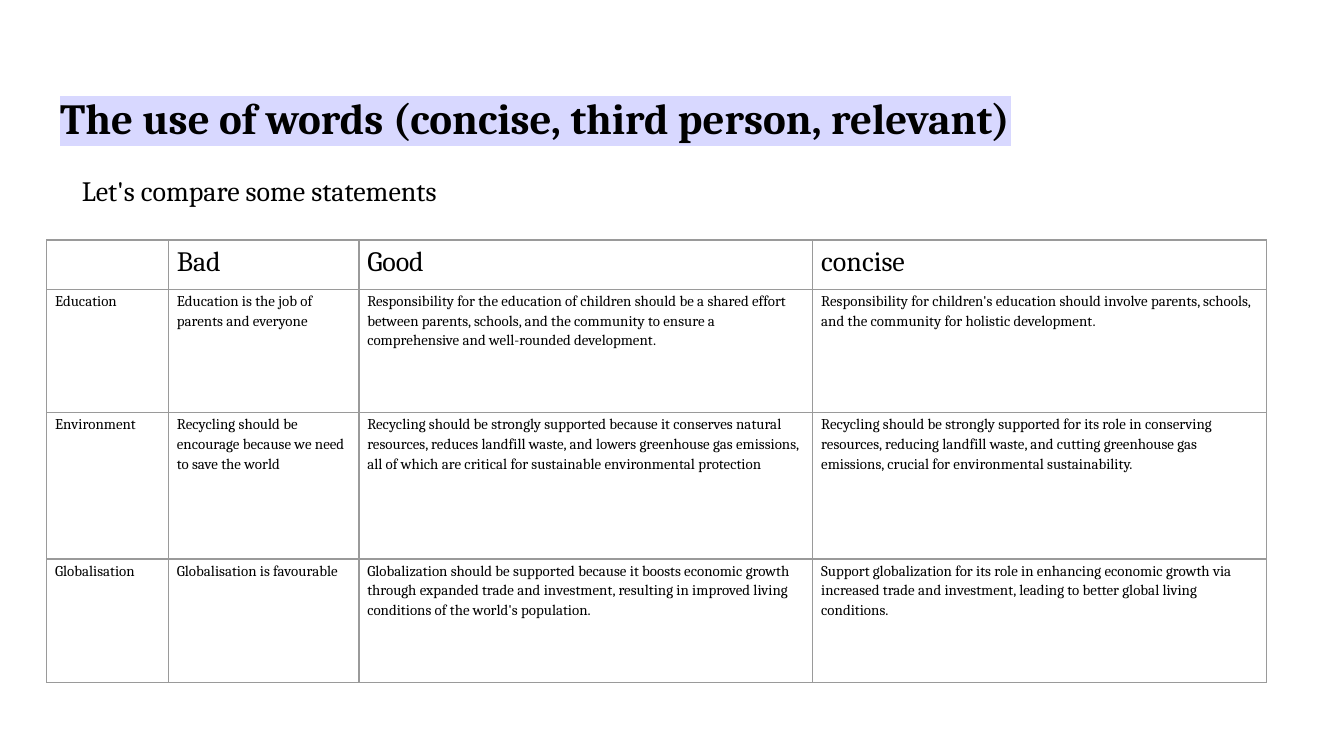
from typing import NamedTuple

from lxml import etree
from pptx import Presentation
from pptx.dml.color import RGBColor
from pptx.enum.text import MSO_ANCHOR
from pptx.oxml.ns import qn
from pptx.util import Pt

MIDDLE = MSO_ANCHOR.MIDDLE
FONT = "Cambria"
COLORS = {"text": "000000", "highlight": "D8D8FF", "border": "9A9A9A"}
LINE_SPACING = 1.15
BORDER_WIDTH = 0.75
HEADER_SIZE = 15
BODY_SIZE = 8

TABLE_LEFT, TABLE_TOP = 25, 128.6
COLUMN_WIDTHS = [65.3, 102, 243.2, 243.2]
ROW_HEIGHTS = [26.3, 66.1, 78.5, 66.1]
ROWS = [
    ["", "Bad", "Good", "concise"],
    [
        "Education",
        "Education is the job of parents and everyone",
        "Responsibility for the education of children should be a shared effort between parents, "
        "schools, and the community to ensure a comprehensive and well-rounded development.",
        "Responsibility for children's education should involve parents, schools, and the "
        "community for holistic development.",
    ],
    [
        "Environment",
        "Recycling should be encourage because we need to save the world",
        "Recycling should be strongly supported because it conserves natural resources, reduces "
        "landfill waste, and lowers greenhouse gas emissions, all of which are critical for "
        "sustainable environmental protection",
        "Recycling should be strongly supported for its role in conserving resources, reducing "
        "landfill waste, and cutting greenhouse gas emissions, crucial for environmental "
        "sustainability.",
    ],
    [
        "Globalisation",
        "Globalisation is favourable",
        "Globalization should be supported because it boosts economic growth through expanded "
        "trade and investment, resulting in improved living conditions of the world's population.",
        "Support globalization for its role in enhancing economic growth via increased trade and "
        "investment, leading to better global living conditions.",
    ],
]


class Label(NamedTuple):
    text: str
    left: float
    top: float
    width: float
    height: float
    size: float
    bottom_inset: float = 7.2
    spacing: float = 1.0
    bold: bool = False
    highlight: str = ""


LABELS = [
    Label("The use of words (concise, third person, relevant)", 25.2, 40.3, 607.7, 45.4, 23,
          bold=True, highlight="highlight"),
    Label("Let's compare some statements", 36.7, 40.3, 257.8, 140.4, HEADER_SIZE,
          bottom_inset=27.4, spacing=LINE_SPACING),
]


def add_run(p, text: str, size: float, bold: bool = False, highlight: str = "") -> None:
    r = p.add_run()
    r.text = text
    font = r.font
    font.name, font.size, font.bold = FONT, Pt(size), bold
    font.color.rgb = RGBColor.from_string(COLORS["text"])
    if highlight:
        mark = etree.Element(qn("a:highlight"))
        etree.SubElement(mark, qn("a:srgbClr"), val=COLORS[highlight])
        r._r.rPr.find(qn("a:latin")).addprevious(mark)


def add_label(s, label: Label) -> None:
    sp = s.shapes.add_textbox(Pt(label.left), Pt(label.top), Pt(label.width), Pt(label.height))
    tf = sp.text_frame
    tf.word_wrap = True
    tf.vertical_anchor = MIDDLE
    tf.margin_left = tf.margin_right = tf.margin_top = Pt(7.2)
    tf.margin_bottom = Pt(label.bottom_inset)
    p = tf.paragraphs[0]
    p.line_spacing = label.spacing
    add_run(p, label.text, label.size, label.bold, label.highlight)


def set_borders(cell) -> None:
    tc_pr = cell._tc.get_or_add_tcPr()
    for side in ("lnL", "lnR", "lnT", "lnB"):
        ln = etree.SubElement(tc_pr, qn(f"a:{side}"), w=str(Pt(BORDER_WIDTH)))
        fill = etree.SubElement(ln, qn("a:solidFill"))
        etree.SubElement(fill, qn("a:srgbClr"), val=COLORS["border"])


def fill_cell(cell, text: str, size: float) -> None:
    set_borders(cell)
    cell.fill.background()
    cell.margin_left = cell.margin_right = Pt(4.5)
    cell.margin_top = cell.margin_bottom = Pt(0.7)
    p = cell.text_frame.paragraphs[0]
    p.line_spacing = LINE_SPACING
    if text:
        add_run(p, text, size)
    else:
        p.font.size = Pt(size)


def add_statement_table(s) -> None:
    table = s.shapes.add_table(
        len(ROWS), len(COLUMN_WIDTHS), Pt(TABLE_LEFT), Pt(TABLE_TOP),
        Pt(sum(COLUMN_WIDTHS)), Pt(sum(ROW_HEIGHTS)),
    ).table
    table.first_row = table.horz_banding = False
    for column, width in zip(table.columns, COLUMN_WIDTHS):
        column.width = Pt(width)
    for i, (row, height, texts) in enumerate(zip(table.rows, ROW_HEIGHTS, ROWS)):
        row.height = Pt(height)
        for cell, text in zip(row.cells, texts):
            fill_cell(cell, text, BODY_SIZE if i else HEADER_SIZE)


def main() -> None:
    prs = Presentation()
    prs.slide_width, prs.slide_height = Pt(720), Pt(405)
    s = prs.slides.add_slide(prs.slide_layouts[6])
    title, subtitle = LABELS
    add_label(s, title)
    add_statement_table(s)
    add_label(s, subtitle)
    prs.save("out.pptx")


if __name__ == "__main__":
    main()
